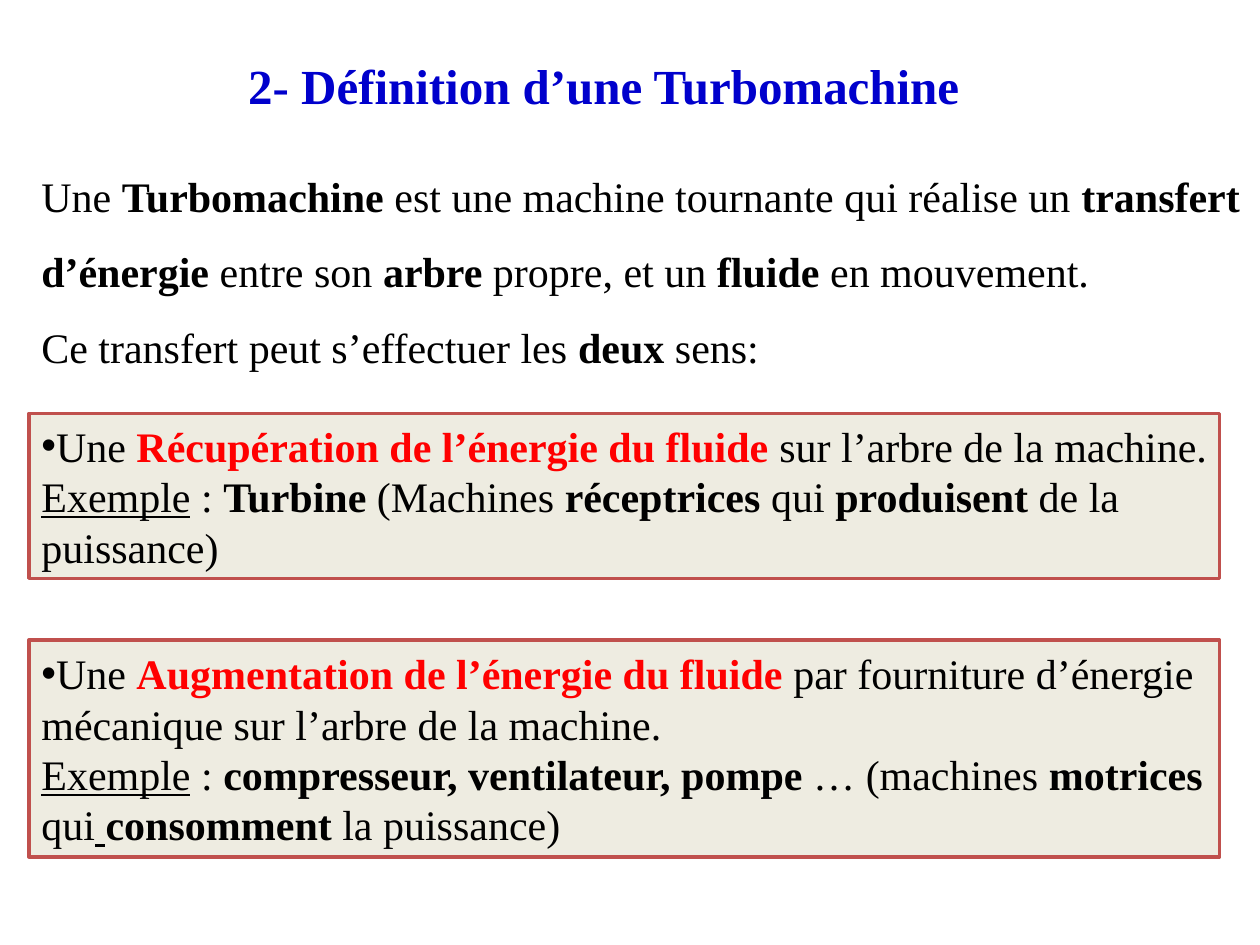
from pptx import Presentation
from pptx.dml.color import RGBColor
from pptx.enum.shapes import MSO_SHAPE
from pptx.enum.text import MSO_ANCHOR, MSO_AUTO_SIZE, PP_ALIGN
from pptx.util import Inches, Pt
from lxml.etree import SubElement
from pptx.oxml.ns import qn

COLORS = {"title": "0000CC", "text": "000000", "accent": "FF0000",
          "panel": "EEECE1", "border": "C0504D"}
FONT = "Times New Roman"
LEFT, PANEL_WIDTH = 0.23, 9.45

DEFINITION = [
    [("Une ", ""), ("Turbomachine", "b"),
     (" est une machine tournante qui réalise un ", ""),
     ("transfert d’énergie", "b"), (" entre son ", ""), ("arbre", "b"),
     (" propre, et un ", ""), ("fluide ", "b"), ("en mouvement.", "")],
    [("Ce transfert peut s’effectuer les ", ""), ("deux", "b"), (" sens:", "")],
]
RECOVERY = [
    [("Une ", ""), ("Récupération de l’énergie du fluide ", "ba"),
     ("sur l’arbre de la machine.", "")],
    [("Exemple", "u"), (" : ", ""), ("Turbine", "b"), (" (Machines ", ""),
     ("réceptrices", "b"), (" qui", ""), (" produisent", "b"),
     (" de la puissance)", "")],
]
INCREASE = [
    [("Une ", ""), ("Augmentation de l’énergie du fluide ", "ba"),
     ("par fourniture d’énergie mécanique sur l’arbre de la machine.", "")],
    [("Exemple", "u"), (" : ", ""), ("compresseur, ventilateur, pompe", "b"),
     (" … (machines ", ""), ("motrices", "b"), (" qui", ""), (" ", "bu"),
     ("consomment", "b"), (" la puissance)", "")],
]


def rgb(name):
    """Return the named palette colour."""
    return RGBColor.from_string(COLORS[name])


def add_bullet(p):
    """Give a paragraph a round bullet without indent."""
    pPr = p._p.get_or_add_pPr()
    pPr.set("marL", "0")
    pPr.set("indent", "0")
    SubElement(pPr, qn("a:buFont"), typeface="Arial")
    SubElement(pPr, qn("a:buChar"), char="•")


def add_run(p, text, style, size=24, color="text"):
    """Add a run; style letters are b bold, u underline, a accent colour."""
    r = p.add_run()
    r.text = text
    r.font.name, r.font.size = FONT, Pt(size)
    r.font.bold = "b" in style
    r.font.underline = "u" in style
    r.font.color.rgb = rgb("accent" if "a" in style else color)


def fill_text(sp, paragraphs, spacing=1.0, bullet=False):
    """Write left-aligned paragraphs of styled runs into a shape."""
    tf = sp.text_frame
    tf.word_wrap = True
    tf.vertical_anchor = MSO_ANCHOR.MIDDLE
    tf.auto_size = MSO_AUTO_SIZE.SHAPE_TO_FIT_TEXT
    for i, runs in enumerate(paragraphs):
        p = tf.add_paragraph() if i else tf.paragraphs[0]
        p.alignment = PP_ALIGN.LEFT
        p.line_spacing = spacing
        if bullet and i == 0:
            add_bullet(p)
        for text, style in runs:
            add_run(p, text, style)


def set_title(s, text):
    """Place and format the slide title."""
    sp = s.shapes.title
    sp.left, sp.top = Inches(1.87), Inches(0.39)
    sp.width, sp.height = Inches(6.17), Inches(0.57)
    tf = sp.text_frame
    tf.word_wrap = True
    tf.vertical_anchor = MSO_ANCHOR.MIDDLE
    tf.auto_size = MSO_AUTO_SIZE.SHAPE_TO_FIT_TEXT
    p = tf.paragraphs[0]
    p.alignment = PP_ALIGN.LEFT
    add_run(p, text, "b", 28, "title")


def add_definition(s, paragraphs):
    """Add the open text that runs to the right edge of the slide."""
    sp = s.shapes.add_textbox(Inches(LEFT), Inches(1.09),
                              Inches(10 - LEFT), Inches(1.92))
    fill_text(sp, paragraphs, spacing=1.5)


def add_panel(s, top, height, paragraphs):
    """Add a bordered panel for one direction of transfer."""
    sp = s.shapes.add_shape(MSO_SHAPE.RECTANGLE, Inches(LEFT), Inches(top),
                            Inches(PANEL_WIDTH), Inches(height))
    sp.shadow.inherit = False
    sp.fill.solid()
    sp.fill.fore_color.rgb = rgb("panel")
    sp.line.color.rgb = rgb("border")
    sp.line.width = Pt(2)
    fill_text(sp, paragraphs, bullet=True)


def main():
    """Build the slide and save it."""
    prs = Presentation()
    prs.slide_width, prs.slide_height = Inches(10), Inches(7.5)
    s = prs.slides.add_slide(prs.slide_layouts[5])
    set_title(s, "2- Définition d’une Turbomachine")
    add_definition(s, DEFINITION)
    add_panel(s, 3.28, 1.31, RECOVERY)
    add_panel(s, 5.08, 1.72, INCREASE)
    prs.save("out.pptx")


if __name__ == "__main__":
    main()
